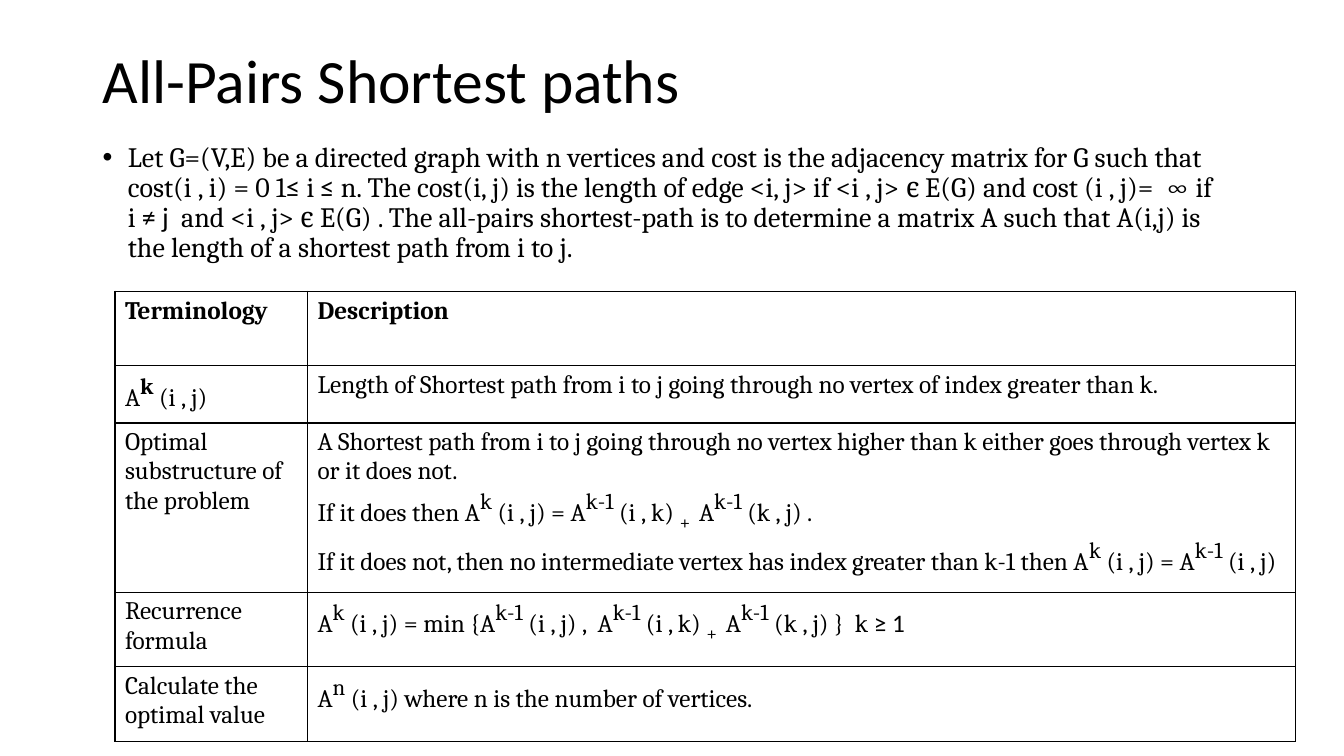
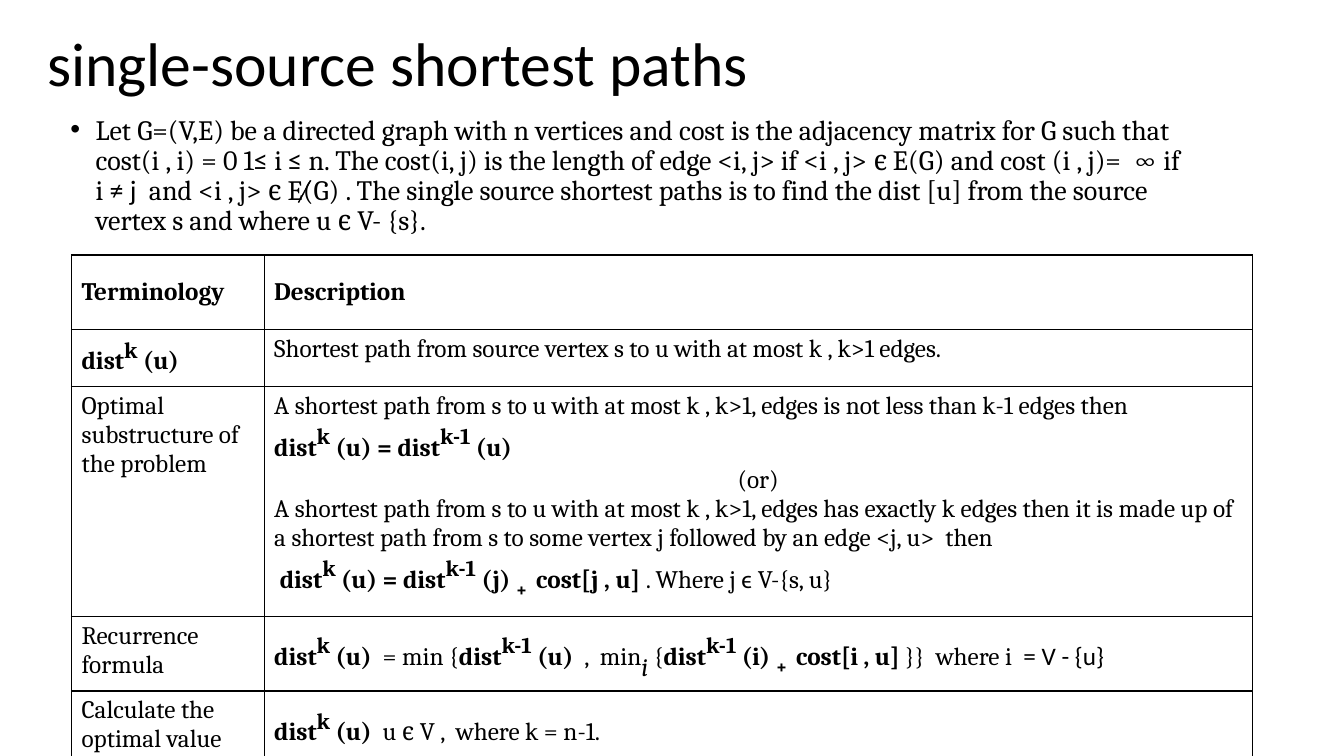
from dataclasses import dataclass

from lxml.etree import SubElement
from pptx import Presentation
from pptx.dml.color import RGBColor
from pptx.enum.shapes import MSO_CONNECTOR
from pptx.enum.text import MSO_ANCHOR, PP_ALIGN
from pptx.oxml.ns import qn
from pptx.util import Inches, Pt

BLACK = RGBColor(0x00, 0x00, 0x00)
SERIF = "Cambria"
SANS = "Calibri"
TOP = MSO_ANCHOR.TOP
MIDDLE = MSO_ANCHOR.MIDDLE
COLUMN_WIDTHS = (1.91, 9.8)
ROW_HEIGHTS = (0.74, 0.54, 0.74, 0.74, 0.74)


@dataclass(frozen=True)
class Run:
    text: str
    size: float = 18
    bold: bool = False
    font: str = SERIF
    baseline: int = 0
    italic: bool = False


@dataclass(frozen=True)
class Para:
    runs: list[Run]
    align: PP_ALIGN = PP_ALIGN.LEFT


@dataclass(frozen=True)
class Cell:
    paras: list[Para]
    anchor: MSO_ANCHOR = TOP


@dataclass(frozen=True)
class Topic:
    title: str
    title_at: tuple[float, float]
    body_at: tuple[float, float]
    goal: str
    table_at: tuple[float, float]
    rows: list[tuple[Cell, Cell]]


def sup(text: str, bold: bool = False) -> Run:
    return Run(text, 28, bold, baseline=30)


def plus(bold: bool = False) -> list[Run]:
    return [Run("+", 24, bold, baseline=-25), Run(" ", 18, bold, baseline=-25)]


def cost(exponent: str, args: str, lead: str = "A") -> list[Run]:
    return [Run(lead), sup(exponent), Run(args)]


def dist(exponent: str, args: str, lead: str = "dist") -> list[Run]:
    return [Run(lead, bold=True), sup(exponent, True), Run(args, bold=True)]


def cell(*lines: list[Run] | str, anchor: MSO_ANCHOR = TOP) -> Cell:
    return Cell([Para([Run(x)] if isinstance(x, str) else x) for x in lines], anchor)


def header(anchor: MSO_ANCHOR) -> tuple[Cell, Cell]:
    return (cell([Run("Terminology", bold=True)], anchor=anchor),
            cell([Run("Description", bold=True)], anchor=anchor))


def labelled(term: Cell, meaning: Cell, substructure: Cell, recurrence: Cell,
             optimum: Cell, header_anchor: MSO_ANCHOR) -> list[tuple[Cell, Cell]]:
    return [
        header(header_anchor),
        (term, meaning),
        (cell("Optimal substructure of the problem"), substructure),
        (cell("Recurrence formula"), recurrence),
        (cell("Calculate the optimal value"), optimum),
    ]


def add_runs(p, runs: list[Run]) -> None:
    for run in runs:
        r = p.add_run()
        r.text = run.text
        r.font.name = run.font
        r.font.size = Pt(run.size)
        r.font.bold = run.bold
        r.font.italic = run.italic
        r.font.color.rgb = BLACK
        if run.baseline:
            r.font._element.set("baseline", str(run.baseline * 1000))


def add_text(s, at: tuple[float, float], size: tuple[float, float],
             runs: list[Run], anchor: MSO_ANCHOR):
    tf = s.shapes.add_textbox(*map(Inches, at + size)).text_frame
    tf.word_wrap = True
    tf.vertical_anchor = anchor
    p = tf.paragraphs[0]
    p.line_spacing = 0.9
    add_runs(p, runs)
    return p


def add_body(s, topic: Topic) -> None:
    runs = [
        Run("Let G=(V,E) be a directed graph with n vertices and cost is the "
            "adjacency matrix for G such that cost(i , i) = 0 1", 20),
        Run("≤ ", 20, font=SANS),
        Run("i ", 20),
        Run("≤ ", 20, font=SANS),
        Run("n. The cost(i, j) is the length of edge <i, j> if <i , j> ϵ E(G) "
            "and cost (i , j)=  ∞ if i ", 20),
        Run("≠ j", 20, font=SANS),
        Run("  and <i , j> ϵ E(G) . " + topic.goal, 20),
    ]
    p = add_text(s, topic.body_at, (11.34, 1.41), runs, TOP)
    p.space_before = Pt(10)
    pPr = p._p.get_or_add_pPr()
    pPr.set("marL", str(Inches(0.25)))
    pPr.set("indent", str(Inches(-0.25)))
    SubElement(pPr, qn("a:buFont")).set("typeface", "Arial")
    SubElement(pPr, qn("a:buChar")).set("char", "•")


def add_borders(tc) -> None:
    tcPr = tc._tc.get_or_add_tcPr()
    for side in ("lnL", "lnR", "lnT", "lnB"):
        ln = SubElement(tcPr, qn(f"a:{side}"))
        ln.set("w", str(Pt(1)))
        fill = SubElement(ln, qn("a:solidFill"))
        SubElement(fill, qn("a:srgbClr")).set("val", str(BLACK))


def fill_cell(tc, content: Cell) -> None:
    add_borders(tc)
    tc.fill.background()
    tc.vertical_anchor = content.anchor
    tf = tc.text_frame
    for i, para in enumerate(content.paras):
        p = tf.add_paragraph() if i else tf.paragraphs[0]
        p.alignment = para.align
        add_runs(p, para.runs)


def add_terms(s, topic: Topic) -> None:
    size = (sum(COLUMN_WIDTHS), sum(ROW_HEIGHTS))
    table = s.shapes.add_table(len(ROW_HEIGHTS), len(COLUMN_WIDTHS),
                               *map(Inches, topic.table_at + size)).table
    table.first_row = table.horz_banding = False
    for column, width in zip(table.columns, COLUMN_WIDTHS):
        column.width = Inches(width)
    for row, height, contents in zip(table.rows, ROW_HEIGHTS, topic.rows):
        row.height = Inches(height)
        for tc, content in zip(row.cells, contents):
            fill_cell(tc, content)


def add_topic(prs, topic: Topic):
    s = prs.slides.add_slide(prs.slide_layouts[6])
    add_text(s, topic.title_at, (11.5, 0.86), [Run(topic.title, 44, font=SANS)], MIDDLE)
    add_body(s, topic)
    add_terms(s, topic)
    return s


def add_strike(s) -> None:
    line = s.shapes.add_connector(MSO_CONNECTOR.STRAIGHT,
                                  *map(Inches, (3.08, 1.79, 2.96, 2.01)))
    line.line.color.rgb = BLACK
    line.line.width = Pt(1)
    SubElement(line._element.spPr, qn("a:effectLst"))


ALL_PAIRS = Topic(
    "All-Pairs Shortest paths", (0.92, 0.4), (0.92, 1.37),
    "The all-pairs shortest-path is to determine a matrix A such that A(i,j) is "
    "the length of a shortest path from i to j.",
    (1.14, 2.89),
    labelled(
        cell([Run("A"), sup("k", True), Run(" (i , j)")]),
        cell("Length of Shortest path from i to j going through no vertex of "
             "index greater than k."),
        cell(
            "A Shortest path from i to j going through no vertex higher than k "
            "either goes through vertex k or it does not.",
            cost("k", " (i , j) = A", "If it does then A")
            + [sup("k-1"), Run(" (i , k) ")] + plus()
            + cost("k-1", " (k , j) .", " A"),
            cost("k", " (i , j) = A", "If it does not, then no intermediate "
                 "vertex has index greater than k-1 then A")
            + [sup("k-1"), Run(" (i , j)")],
        ),
        cell(cost("k", " (i , j) = min {A") + [sup("k-1")]
             + cost("k-1", " (i , k) ", " (i , j) ,  A") + plus()
             + cost("k-1", " (k , j) }  k ", " A") + [Run("≥ 1", font=SANS)]),
        cell(cost("n", " (i , j) where n is the number of vertices.")),
        TOP,
    ),
)

SINGLE_SOURCE = Topic(
    "single-source shortest paths", (0.37, 0.23), (0.6, 1.1),
    "The single source shortest paths is to find the dist [u] from the source "
    "vertex s and where u ϵ V- {s}.",
    (0.71, 2.53),
    labelled(
        cell(dist("k", " (u)")),
        cell("Shortest path from source vertex s to u with at most k , k>1 edges."),
        Cell([
            Para([Run("A shortest path from s to u with at most k , k>1, edges is "
                      "not less than k-1 edges then")]),
            Para(dist("k", " (u) = ") + dist("k-1", " (u)")),
            Para([Run("(or)")], PP_ALIGN.CENTER),
            Para([Run("A shortest path from s to u with at most k , k>1, edges has "
                      "exactly k edges then it is made up of a shortest path from s "
                      "to some vertex j followed by an edge <j, u>  then")]),
            Para([Run(" ")] + dist("k", " (u) = ") + dist("k-1", " (j) ") + plus(True)
                 + [Run(" cost[j , u] ", bold=True), Run(". Where j "),
                    Run("ϵ", font=SANS), Run(" V-{s, u}")]),
        ]),
        cell(dist("k", " (u) ") + [Run(" = min {")] + dist("k-1", " (u) ")
             + [Run(" ,  min"), Run("i", 32, baseline=-25, italic=True), Run(" {")]
             + dist("k-1", " (i) ") + plus(True)
             + [Run(" cost[i , u]", bold=True), Run(" }}  where i "),
                Run(" = V - {u}", font=SANS)], anchor=MIDDLE),
        cell(dist("k", " (u)  ") + [Run("u ϵ V ,  where k = n-1.")], anchor=MIDDLE),
        MIDDLE,
    ),
)


def main() -> None:
    prs = Presentation()
    prs.slide_width, prs.slide_height = Inches(13.33), Inches(7.5)
    add_topic(prs, ALL_PAIRS)
    add_strike(add_topic(prs, SINGLE_SOURCE))
    prs.save("out.pptx")


if __name__ == "__main__":
    main()
